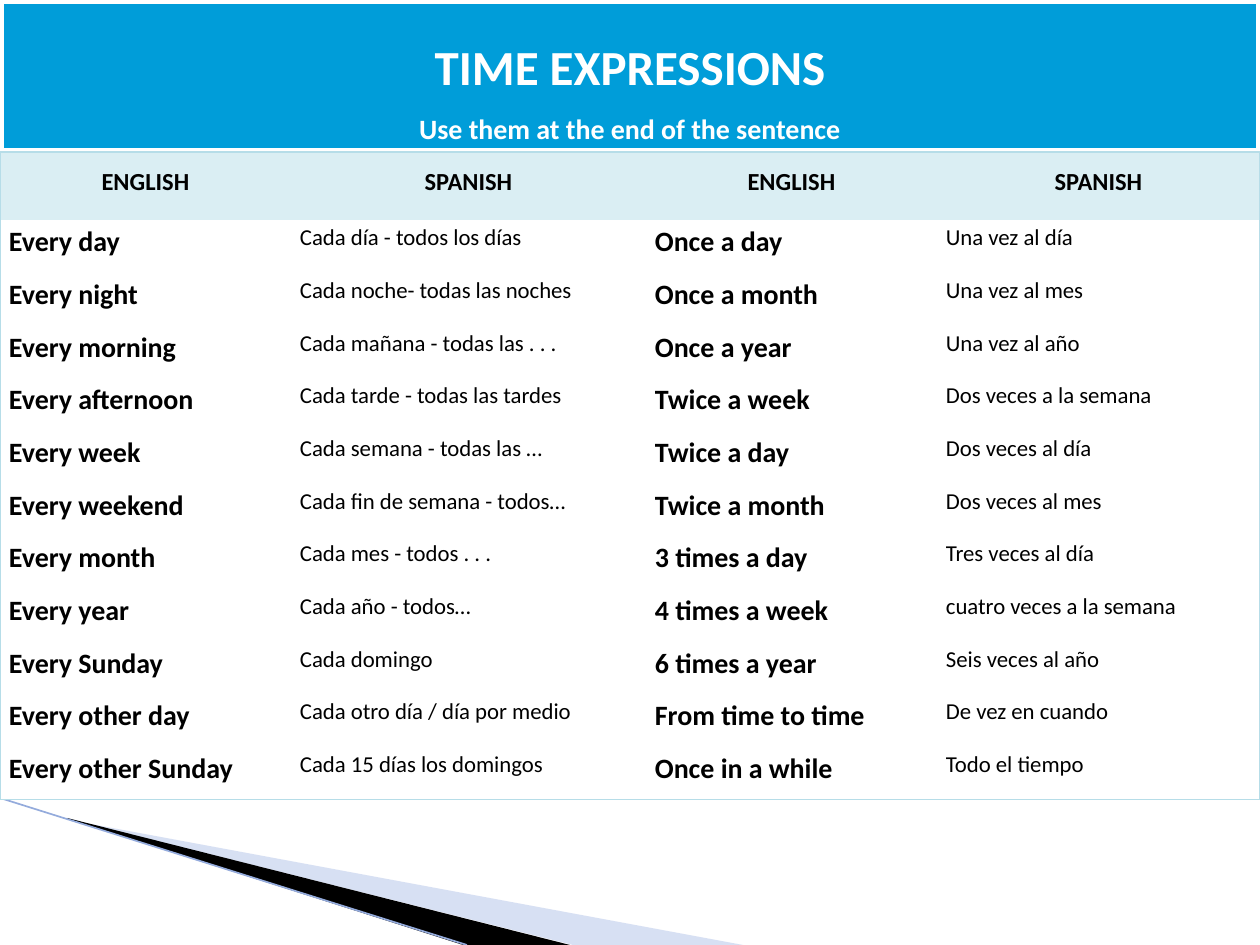
from lxml.etree import SubElement
from pptx import Presentation
from pptx.dml.color import RGBColor
from pptx.enum.shapes import MSO_CONNECTOR
from pptx.enum.text import MSO_ANCHOR, MSO_AUTO_SIZE, PP_ALIGN
from pptx.oxml.ns import qn
from pptx.util import Pt

PX = 914400 // 126
WIDTH, HEIGHT = 1260, 945
FONT = "Calibri"
NO_GRID_STYLE = "{2D5ABB26-0587-4C30-8999-92F81FD0307C}"

BANNER_BLUE = RGBColor(0x00, 0x9D, 0xD9)
HEADER_TINT = RGBColor(0xDA, 0xEE, 0xF3)
FRAME_BLUE = RGBColor(0xB6, 0xDD, 0xE8)
WEDGE_BLUE = RGBColor(0x9D, 0xB2, 0xE1)
EDGE_BLUE = RGBColor(0x94, 0xAB, 0xDC)
WHITE = RGBColor(0xFF, 0xFF, 0xFF)
BLACK = RGBColor(0x00, 0x00, 0x00)

HEADINGS = ("ENGLISH", "SPANISH", "ENGLISH", "SPANISH")
EXPRESSIONS = (
    ("Every day", "Cada día - todos los días", "Once a day", "Una vez al día"),
    ("Every night", "Cada noche- todas las noches", "Once a month", "Una vez al mes"),
    ("Every morning", "Cada mañana - todas las . . .", "Once a year", "Una vez al año"),
    ("Every afternoon", "Cada tarde - todas las tardes", "Twice a week", "Dos veces a la semana"),
    ("Every week", "Cada semana - todas las …", "Twice a day", "Dos veces al día"),
    ("Every weekend", "Cada fin de semana - todos…", "Twice a month", "Dos veces al mes"),
    ("Every month", "Cada mes - todos . . .", "3 times a day", "Tres veces al día"),
    ("Every year", "Cada año - todos…", "4 times a week", "cuatro veces a la semana"),
    ("Every Sunday", "Cada domingo", "6 times a year", "Seis veces al año"),
    ("Every other day", "Cada otro día / día por medio", "From time to time", "De vez en cuando"),
    ("Every other Sunday", "Cada 15 días los domingos", "Once in a while", "Todo el tiempo"),
)


def add_colour(parent, colour, alpha=None):
    solid = SubElement(parent, qn("a:solidFill"))
    value = SubElement(solid, qn("a:srgbClr"), val=str(colour))
    if alpha:
        SubElement(value, qn("a:alpha"), val=str(alpha * 1000))


def format_paragraph(paragraph, size, colour, bold, align, spacing):
    paragraph.alignment = align
    paragraph.line_spacing = spacing
    for run in paragraph.runs:
        run.font.name = FONT
        run.font.size = Pt(size)
        run.font.bold = bold
        run.font.color.rgb = colour


def add_wedge(slide, left, top, points, colour, alpha=None):
    start, *rest = [(left + x, top + y) for x, y in points]
    builder = slide.shapes.build_freeform(*start, scale=PX)
    builder.add_line_segments(rest, close=True)
    wedge = builder.convert_to_shape()
    wedge.shadow.inherit = False
    wedge.fill.solid()
    wedge.fill.fore_color.rgb = colour
    wedge.line.fill.background()
    if alpha:
        value = wedge.fill._xPr.find(".//" + qn("a:srgbClr"))
        SubElement(value, qn("a:alpha"), val=str(alpha * 1000))


def add_corner(slide, left, top, width, height):
    add_wedge(slide, left, top, ((69, 22), (743, height), (573, height), (69, 21)), WEDGE_BLUE, 40)
    add_wedge(slide, left, top, ((67, 20), (570, height), (463, height), (68, 21)), BLACK)
    edge = slide.shapes.add_connector(
        MSO_CONNECTOR.STRAIGHT, left * PX, top * PX, (left + width) * PX, (top + height) * PX)
    edge.line.color.rgb = EDGE_BLUE
    edge.line.width = Pt(0.95)
    SubElement(edge._element.spPr, qn("a:effectLst"))


def add_banner(slide, left, top, width, height):
    banner = slide.shapes.title
    banner.left, banner.top = left * PX, top * PX
    banner.width, banner.height = width * PX, height * PX
    banner.fill.solid()
    banner.fill.fore_color.rgb = BANNER_BLUE
    banner.line.color.rgb = WHITE
    banner.line.width = Pt(5)
    effects = SubElement(banner._element.spPr, qn("a:effectLst"))
    shadow = SubElement(effects, qn("a:outerShdw"), blurRad=str(Pt(4)), dist=str(Pt(3)),
                        dir="5400000", rotWithShape="0")
    value = SubElement(shadow, qn("a:srgbClr"), val=str(BLACK))
    SubElement(value, qn("a:alpha"), val="35000")

    frame = banner.text_frame
    frame.text = "TIME EXPRESSIONS\nUse them at the end of the sentence"
    frame.word_wrap = True
    frame.auto_size = MSO_AUTO_SIZE.NONE
    frame.vertical_anchor = MSO_ANCHOR.MIDDLE
    for paragraph, size in zip(frame.paragraphs, (28, 16)):
        format_paragraph(paragraph, size, WHITE, True, PP_ALIGN.CENTER, 1.5)


def add_borders(cell, sides):
    properties = cell._tc.get_or_add_tcPr()
    for side in sides:
        border = SubElement(properties, qn("a:ln" + side), w=str(Pt(1)))
        add_colour(border, FRAME_BLUE)


def add_expressions(slide, left, top, width, height):
    rows = (HEADINGS, *EXPRESSIONS)
    last_row, last_column = len(rows) - 1, len(HEADINGS) - 1
    table = slide.shapes.add_table(
        len(rows), len(HEADINGS), left * PX, top * PX, width * PX, height * PX).table
    table._tbl.tblPr.find(qn("a:tableStyleId")).text = NO_GRID_STYLE
    table.horz_banding = False

    column_widths = (291, 355, 291)
    for column, column_width in zip(table.columns, (*column_widths, width - sum(column_widths))):
        column.width = column_width * PX
    header_height = 68
    for row in table.rows:
        row.height = (height - header_height) * PX // last_row
    table.rows[0].height = header_height * PX

    for r, texts in enumerate(rows):
        for c, text in enumerate(texts):
            cell = table.cell(r, c)
            cell.margin_left = cell.margin_right = 9 * PX
            cell.margin_top = cell.margin_bottom = 0
            outer = {"L": c == 0, "R": c == last_column, "T": r == 0, "B": r == last_row}
            add_borders(cell, [side for side, on_edge in outer.items() if on_edge])
            cell.fill.solid()
            cell.fill.fore_color.rgb = WHITE if r else HEADER_TINT
            cell.text_frame.text = text
            paragraph = cell.text_frame.paragraphs[0]
            if r == 0:
                format_paragraph(paragraph, 14, BLACK, True, PP_ALIGN.CENTER, 1.5)
            else:
                english = c % 2 == 0
                format_paragraph(paragraph, 16 if english else 13, BLACK, english,
                                 PP_ALIGN.LEFT, 1.15)


def main():
    presentation = Presentation()
    presentation.slide_width = WIDTH * PX
    presentation.slide_height = HEIGHT * PX
    slide = presentation.slides.add_slide(presentation.slide_layouts[5])
    add_corner(slide, 0, 798, 467, HEIGHT - 798)
    add_banner(slide, 0, 0, WIDTH, 152)
    add_expressions(slide, 0, 152, WIDTH, 648)
    presentation.save("out.pptx")


if __name__ == "__main__":
    main()
